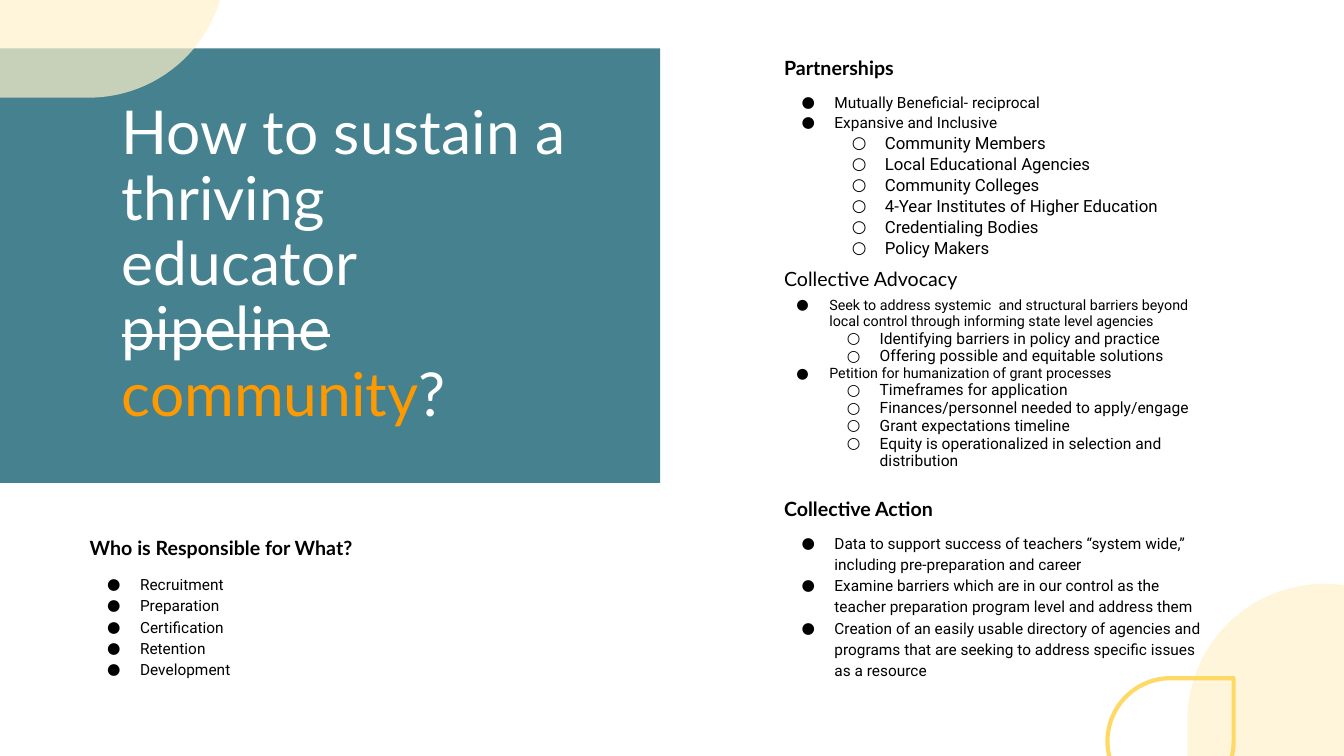
from dataclasses import dataclass

import lxml.etree
import pptx
import pptx.dml.color
import pptx.enum.shapes
import pptx.enum.text
import pptx.oxml.ns
import pptx.util

Cm = pptx.util.Cm
SHAPES = pptx.enum.shapes.MSO_SHAPE


@dataclass(frozen=True)
class Theme:
    teal: str = "45818E"
    cream: str = "FFF2CC"
    gold: str = "FFD966"
    orange: str = "FF9900"
    white: str = "FFFFFF"
    black: str = "000000"
    heading_font: str = "Lato"
    body_font: str = "Roboto"
    title_size: float = 43.2
    heading_size: float = 14
    item_size: float = 11
    subitem_size: float = 12
    small_item_size: float = 10.2
    small_subitem_size: float = 11.1


THEME = Theme()
RIGHT_COLUMN = 19.51
LEFT_COLUMN = 2.01

# Each list entry is (level, text)
PARTNERSHIPS = [
    (0, "Mutually Beneficial- reciprocal"),
    (0, "Expansive and Inclusive"),
    (1, "Community Members"),
    (1, "Local Educational Agencies"),
    (1, "Community Colleges"),
    (1, "4-Year Institutes of Higher Education"),
    (1, "Credentialing Bodies"),
    (1, "Policy Makers"),
]
ADVOCACY = [
    (0, "Seek to address systemic  and structural barriers beyond "
        "local control through informing state level agencies"),
    (1, "Identifying barriers in policy and practice"),
    (1, "Offering possible and equitable solutions"),
    (0, "Petition for humanization of grant processes"),
    (1, "Timeframes for application"),
    (1, "Finances/personnel needed to apply/engage"),
    (1, "Grant expectations timeline"),
    (1, "Equity is operationalized in selection and distribution"),
]
ACTION = [
    (0, "Data to support success of teachers “system wide,” "
        "including pre-preparation and career"),
    (0, "Examine barriers which are in our control as the "
        "teacher preparation program level and address them"),
    (0, "Creation of an easily usable directory of agencies and programs "
        "that are seeking to address specific issues as a resource"),
]
RESPONSIBILITIES = [(0, "Recruitment"), (0, "Preparation"), (0, "Certification"),
                    (0, "Retention"), (0, "Development")]


def rgb(color):
    return pptx.dml.color.RGBColor.from_string(color)


def add_xml(parent, tag, **attributes):
    return lxml.etree.SubElement(parent, pptx.oxml.ns.qn(tag), attributes)


def add_block(slide, preset, left, top, width, height, fill=None, line=None,
              opacity=None, rotation=0):
    block = slide.shapes.add_shape(preset, Cm(left), Cm(top), Cm(width), Cm(height))
    block.shadow.inherit = False
    block.rotation = rotation
    if fill:
        block.fill.solid()
        block.fill.fore_color.rgb = rgb(fill)
    else:
        block.fill.background()
    if line:
        block.line.color.rgb = rgb(line)
        block.line.width = pptx.util.Pt(3)
    else:
        block.line.fill.background()
    if opacity:
        color = block.fill._xPr.find(".//" + pptx.oxml.ns.qn("a:srgbClr"))
        add_xml(color, "a:alpha", val=str(opacity * 1000))


def add_text_frame(slide, left, top, width, height):
    box = slide.shapes.add_textbox(Cm(left), Cm(top), Cm(width), Cm(height))
    frame = box.text_frame
    frame.word_wrap = True
    frame.vertical_anchor = pptx.enum.text.MSO_ANCHOR.TOP
    return frame


def add_run(paragraph, text, size, font, color=THEME.black, bold=False, strike=False):
    run = paragraph.add_run()
    run.text = text
    run.font.size = pptx.util.Pt(size)
    run.font.name = font
    run.font.bold = bold
    run.font.color.rgb = rgb(color)
    if strike:
        run._r.get_or_add_rPr().set("strike", "sngStrike")


def add_title(slide):
    paragraph = add_text_frame(slide, 2.82, 2.46, 11.71, 8.46).paragraphs[0]
    paragraph.line_spacing = 0.9
    for text, color, strike in [
        ("How to sustain a thriving educator ", THEME.white, False),
        ("pipeline ", THEME.white, True),
        ("community", THEME.orange, False),
        ("?", THEME.white, False),
    ]:
        add_run(paragraph, text, THEME.title_size, THEME.heading_font, color,
                strike=strike)


def add_heading(slide, text, left, top, width=7.16, bold=True):
    paragraph = add_text_frame(slide, left, top, width, 0.86).paragraphs[0]
    paragraph.line_spacing = 0.9
    add_run(paragraph, text, THEME.heading_size, THEME.heading_font, bold=bold)


def set_bullet(paragraph, level):
    paragraph.level = level
    properties = paragraph._p.get_or_add_pPr()
    properties.set("marL", str(Cm(1.27 * (level + 1))))
    properties.set("indent", str(-Cm(0.83)))
    add_xml(add_xml(properties, "a:buClr"), "a:srgbClr", val=THEME.black)
    add_xml(properties, "a:buFont", typeface=THEME.body_font)
    add_xml(properties, "a:buChar", char="●○"[level])


def add_list(slide, items, left, top, height, spacing, width=11.2,
             sizes=(THEME.item_size, THEME.subitem_size)):
    frame = add_text_frame(slide, left, top, width, height)
    for index, (level, text) in enumerate(items):
        paragraph = frame.add_paragraph() if index else frame.paragraphs[0]
        set_bullet(paragraph, level)
        paragraph.line_spacing = spacing
        add_run(paragraph, text, sizes[level], THEME.body_font)


def main():
    deck = pptx.Presentation()
    deck.slide_width, deck.slide_height = Cm(33.87), Cm(19.05)
    slide = deck.slides.add_slide(deck.slide_layouts[6])

    # Title panel and corner decoration
    add_block(slide, SHAPES.RECTANGLE, 0, 1.22, 16.64, 10.95, fill=THEME.teal)
    for left, top in [(29.92, 14.71), (-1.22, -4.45)]:
        add_block(slide, SHAPES.TEAR, left, top, 6.91, 6.91, fill=THEME.cream,
                  opacity=70, rotation=180)
    add_block(slide, SHAPES.TEAR, 27.91, 17.09, 3.18, 3.18, line=THEME.gold)
    add_title(slide)

    # Right column
    add_heading(slide, "Partnerships", RIGHT_COLUMN, 1.35)
    add_list(slide, PARTNERSHIPS, RIGHT_COLUMN, 2.21, 4.47, 1.05)
    add_heading(slide, "Collective Advocacy", RIGHT_COLUMN, 6.68, bold=False)
    add_list(slide, ADVOCACY, 19.38, 7.37, 4.8, 0.95,
             sizes=(THEME.small_item_size, THEME.small_subitem_size))
    add_heading(slide, "Collective Action", RIGHT_COLUMN, 12.47)
    add_list(slide, ACTION, RIGHT_COLUMN, 13.26, 4.34, 1.15)

    # Responsibilities below the title panel
    add_heading(slide, "Who is Responsible for What?", LEFT_COLUMN, 13.44, width=9.7)
    add_list(slide, RESPONSIBILITIES, LEFT_COLUMN, 14.3, 4.01, 1.15, width=13.61)

    deck.save("out.pptx")


if __name__ == "__main__":
    main()
